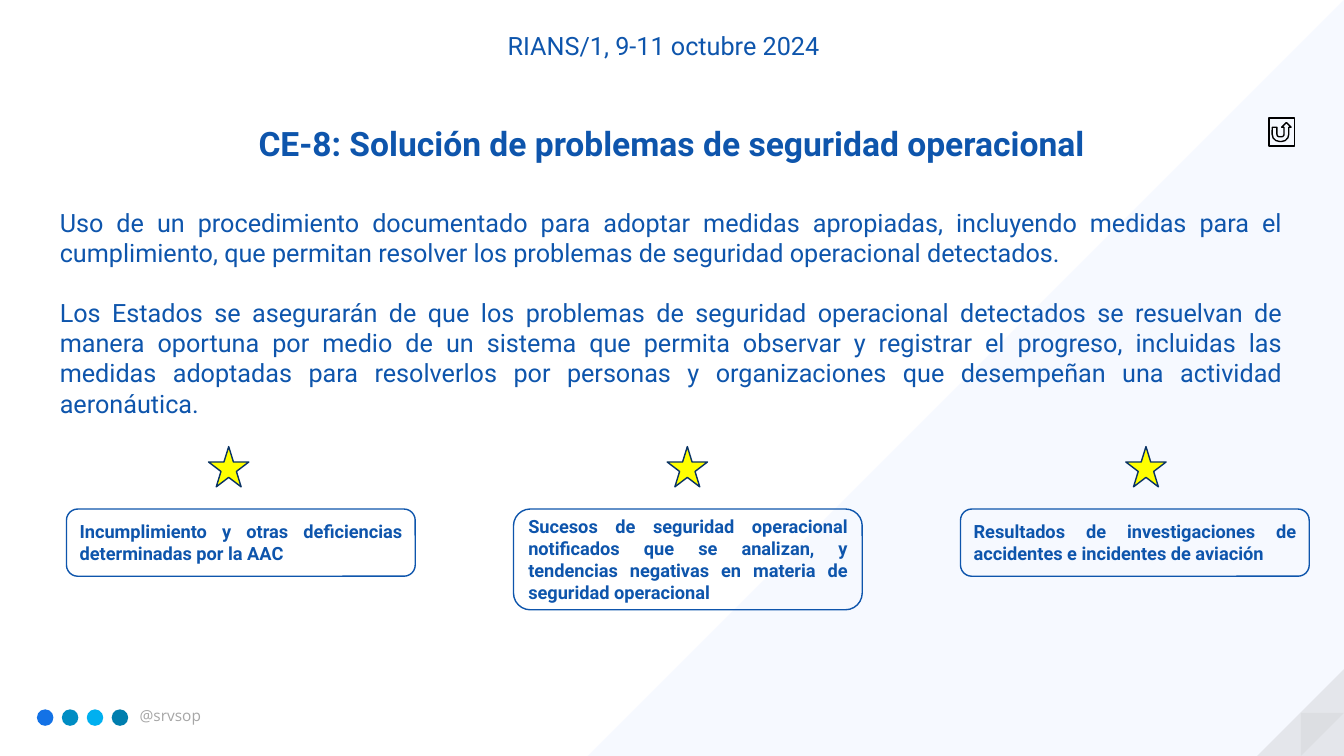
"""Build the slide on critical element CE-8, resolution of safety issues."""
from dataclasses import dataclass
from typing import Optional

from lxml import etree
from pptx import Presentation
from pptx.dml.color import RGBColor
from pptx.enum.shapes import MSO_SHAPE
from pptx.enum.text import MSO_ANCHOR, MSO_AUTO_SIZE, PP_ALIGN
from pptx.oxml.ns import qn
from pptx.shapes.autoshape import Shape
from pptx.slide import Slide
from pptx.util import Pt

TRIANGLE = MSO_SHAPE.RIGHT_TRIANGLE
OVAL = MSO_SHAPE.OVAL
STAR = MSO_SHAPE.STAR_5_POINT
ROUNDED = MSO_SHAPE.ROUNDED_RECTANGLE
RETURN_BUTTON = MSO_SHAPE.ACTION_BUTTON_RETURN
LEFT, CENTER, JUSTIFY = PP_ALIGN.LEFT, PP_ALIGN.CENTER, PP_ALIGN.JUSTIFY
TOP, MIDDLE = MSO_ANCHOR.TOP, MSO_ANCHOR.MIDDLE
NO_AUTOFIT = MSO_AUTO_SIZE.NONE

BLUE = "0E55AC"
GRAY = "A6A6A6"
FONT = "Roboto"
ROW_LEFT, ROW_PITCH, ROW_TOP, BOX_WIDTH = 47.5, 319.3, 363.6, 249.1
STAR_LEFT, STAR_PITCH, STAR_TOP, STAR_SIZE = 149, 327.6, 319, 28.8
ICON_LEFT, ICON_PITCH, ICON_TOP, ICON_SIZE = 26.4, 17.8, 506.7, 11.8
ICON_COLORS = ("1372E6", "008DC3", "00B0F0", "007EAE")

TITLE = "CE-8: Solución de problemas de seguridad operacional"
BODY = (
    "Uso de un procedimiento documentado para adoptar medidas apropiadas, incluyendo medidas "
    "para el cumplimiento, que permitan resolver los problemas de seguridad operacional detectados.",
    "Los Estados se asegurarán de que los problemas de seguridad operacional detectados se "
    "resuelvan de manera oportuna por medio de un sistema que permita observar y registrar el "
    "progreso, incluidas las medidas adoptadas para resolverlos por personas y organizaciones "
    "que desempeñan una actividad aeronáutica.",
)


@dataclass(frozen=True)
class Area:
    """Position and size in points."""
    left: float
    top: float
    width: float
    height: float


@dataclass(frozen=True)
class TextStyle:
    """Look of a block of text."""
    size: float
    align: PP_ALIGN
    bold: bool = False
    color: str = BLUE
    font: str = FONT
    anchor: MSO_ANCHOR = TOP
    gap: float = 0


@dataclass(frozen=True)
class Corner:
    """Square decorative triangle turned into place."""
    left: float
    top: float
    size: float
    rotation: float
    color: str
    opacity: int = 100


@dataclass(frozen=True)
class Source:
    """Boxed source of safety issues."""
    text: str
    height: float


CORNERS = (
    Corner(420, 0, 540, 270, "F6F9FF"),
    Corner(898, 478, 62, 270, GRAY, 22),
    Corner(929.2, 509.2, 30.8, 90, "BFBFBF", 20),
)
SOURCES = (
    Source("Incumplimiento y otras deficiencias determinadas por la AAC", 48),
    Source("Sucesos de seguridad operacional notificados que se analizan, y tendencias "
           "negativas en materia de seguridad operacional", 72),
    Source("Resultados de investigaciones de accidentes e incidentes de aviación", 48),
)
HEADER_STYLE = TextStyle(18, CENTER)
HANDLE_STYLE = TextStyle(11, LEFT, color=GRAY, font="Open Sans")
TITLE_STYLE = TextStyle(24, CENTER, bold=True)
BODY_STYLE = TextStyle(18, JUSTIFY, gap=21.3)
SOURCE_STYLE = TextStyle(13, JUSTIFY, bold=True, anchor=MIDDLE)


def rgb(color: str) -> RGBColor:
    """Turn a hex string into a colour."""
    return RGBColor.from_string(color)


def write(shape: Shape, texts: tuple[str, ...], style: TextStyle) -> None:
    """Fill a shape with styled paragraphs."""
    frame = shape.text_frame
    frame.word_wrap = True
    frame.auto_size = NO_AUTOFIT
    frame.vertical_anchor = style.anchor
    for index, text in enumerate(texts):
        paragraph = frame.add_paragraph() if index else frame.paragraphs[0]
        paragraph.alignment = style.align
        paragraph.space_before = Pt(style.gap if index else 0)
        run = paragraph.add_run()
        run.text = text
        run.font.name = style.font
        run.font.size = Pt(style.size)
        run.font.bold = style.bold
        run.font.color.rgb = rgb(style.color)


def add_shape(slide: Slide, kind: MSO_SHAPE, area: Area, fill: Optional[str] = None,
              line: Optional[str] = None) -> Shape:
    """Add a preset shape with optional fill and outline."""
    shape = slide.shapes.add_shape(
        kind, Pt(area.left), Pt(area.top), Pt(area.width), Pt(area.height))
    shape.shadow.inherit = False
    if fill:
        shape.fill.solid()
        shape.fill.fore_color.rgb = rgb(fill)
    else:
        shape.fill.background()
    if line:
        shape.line.color.rgb = rgb(line)
        shape.line.width = Pt(1)
    else:
        shape.line.fill.background()
    return shape


def add_label(slide: Slide, area: Area, text: str, style: TextStyle) -> None:
    """Add a text box with one paragraph."""
    box = slide.shapes.add_textbox(
        Pt(area.left), Pt(area.top), Pt(area.width), Pt(area.height))
    write(box, (text,), style)


def add_corner(slide: Slide, corner: Corner) -> None:
    """Add a background triangle."""
    area = Area(corner.left, corner.top, corner.size, corner.size)
    shape = add_shape(slide, TRIANGLE, area, corner.color)
    shape.rotation = corner.rotation
    if corner.opacity < 100:
        color = shape.element.find(f".//{qn('a:srgbClr')}")
        etree.SubElement(color, qn("a:alpha"), val=str(corner.opacity * 1000))


def fill_placeholder(shape: Shape, area: Area, texts: tuple[str, ...], style: TextStyle) -> None:
    """Move a placeholder to the front and fill it without bullets."""
    shape.element.getparent().append(shape.element)
    shape.left, shape.top = Pt(area.left), Pt(area.top)
    shape.width, shape.height = Pt(area.width), Pt(area.height)
    write(shape, texts, style)
    for paragraph in shape.text_frame.paragraphs:
        properties = paragraph._p.get_or_add_pPr()
        properties.set("marL", "0")
        properties.set("indent", "0")
        etree.SubElement(properties, qn("a:buNone"))


def main() -> None:
    """Build and save the presentation."""
    presentation = Presentation()
    presentation.slide_width, presentation.slide_height = Pt(960), Pt(540)
    slide = presentation.slides.add_slide(presentation.slide_layouts[1])
    for corner in CORNERS:
        add_corner(slide, corner)
    for index, color in enumerate(ICON_COLORS):
        left = ICON_LEFT + index * ICON_PITCH
        add_shape(slide, OVAL, Area(left, ICON_TOP, ICON_SIZE, ICON_SIZE), color)
    add_label(slide, Area(92.6, 501, 107, 21), "@srvsop", HANDLE_STYLE)
    add_label(slide, Area(258.5, 18.2, 431, 29), "RIANS/1, 9-11 octubre 2024", HEADER_STYLE)
    fill_placeholder(slide.shapes.title, Area(73, 84.4, 813.6, 36), (TITLE,), TITLE_STYLE)
    fill_placeholder(slide.placeholders[1], Area(35.5, 144.2, 888, 138), BODY, BODY_STYLE)
    for index, source in enumerate(SOURCES):
        box_area = Area(ROW_LEFT + index * ROW_PITCH, ROW_TOP, BOX_WIDTH, source.height)
        write(add_shape(slide, ROUNDED, box_area, line=BLUE), (source.text,), SOURCE_STYLE)
        star_left = STAR_LEFT + index * STAR_PITCH
        add_shape(slide, STAR, Area(star_left, STAR_TOP, STAR_SIZE, STAR_SIZE), "FFFF00", "083265")
    add_shape(slide, RETURN_BUTTON, Area(906.5, 84.2, 18, 20.2), line="000000")
    presentation.save("out.pptx")


if __name__ == "__main__":
    main()
